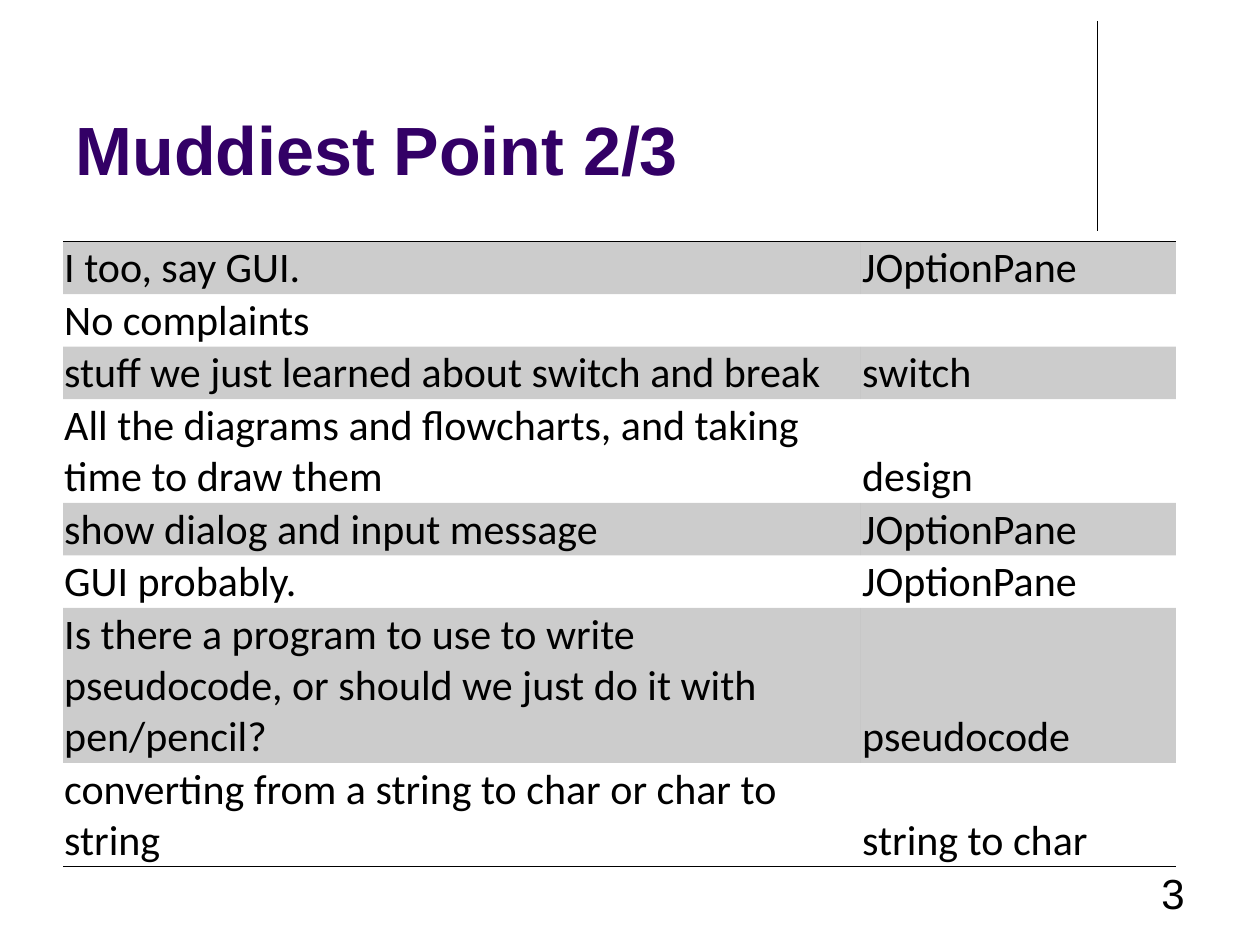
import pptx
import pptx.dml.color
import pptx.enum.shapes
import pptx.enum.text
import pptx.oxml
import pptx.oxml.ns
import pptx.util

COLORS = {"ink": "000000", "title": "330066"}
UNIT = pptx.util.Inches(1) / 6
ANCHOR = pptx.enum.text.MSO_ANCHOR
ALIGN = pptx.enum.text.PP_ALIGN
PLAIN_TABLE = "{2D5ABB26-0587-4C30-8999-92F81FD0307C}"
COMMENTS = [
    ("I too, say GUI.", "JOptionPane", 1),
    ("No complaints", "", 1),
    ("stuff we just learned about switch and break", "switch", 1),
    ("All the diagrams and flowcharts, and taking time to draw them", "design", 2),
    ("show dialog and input message", "JOptionPane", 1),
    ("GUI probably.", "JOptionPane", 1),
    ("Is there a program to use to write pseudocode, or should we just do it "
     "with pen/pencil?", "pseudocode", 3),
    ("converting from a string to char or char to string", "string to char", 2),
]


def grid(*units):
    """Convert grid units of a sixth of an inch to lengths."""
    return [pptx.util.Emu(round(unit * UNIT)) for unit in units]


def apply(target, values):
    """Set each named attribute of the target."""
    for name, value in values.items():
        setattr(target, name, value)


def rgb(name):
    """Look up a palette colour."""
    return pptx.dml.color.RGBColor.from_string(COLORS[name])


class SlideBuilder:
    """Hold the text styles and the current slide."""

    styles = {
        "title": {"name": "Arial", "size": pptx.util.Pt(39), "bold": True},
        "cell": {"name": "Calibri", "size": pptx.util.Pt(24)},
        "number": {"name": "Arial", "size": pptx.util.Pt(24)},
    }

    def __init__(self, presentation):
        """Add a title-only slide."""
        self.slide = presentation.slides.add_slide(presentation.slide_layouts[5])

    def set_text(self, frame, text, style, color="ink", align=ALIGN.LEFT):
        """Fill a text frame with one styled paragraph."""
        frame.text = text
        frame.word_wrap = True
        paragraph = frame.paragraphs[0]
        paragraph.alignment = align
        apply(paragraph.font, self.styles[style])
        paragraph.font.color.rgb = rgb(color)

    def title(self, text, *box):
        """Place and format the title placeholder."""
        shape = self.slide.shapes.title
        apply(shape, dict(zip(("left", "top", "width", "height"), grid(*box))))
        self.set_text(shape.text_frame, text, "title", "title")
        apply(shape.text_frame, {"vertical_anchor": ANCHOR.BOTTOM,
                                 "auto_size": pptx.enum.text.MSO_AUTO_SIZE.NONE})

    def number(self, text, *box):
        """Add the right-aligned slide number."""
        shape = self.slide.shapes.add_textbox(*grid(*box))
        self.set_text(shape.text_frame, text, "number", align=ALIGN.RIGHT)

    def rule(self, *ends):
        """Draw a thin straight line."""
        line = self.slide.shapes.add_connector(
            pptx.enum.shapes.MSO_CONNECTOR.STRAIGHT, *grid(*ends))
        line.line.width = pptx.util.Pt(0.75)
        line.line.color.rgb = rgb("ink")
        line._element.spPr.append(pptx.oxml.parse_xml(
            f'<a:effectLst {pptx.oxml.ns.nsdecls("a")}/>'))

    def shade(self, cell):
        """Fill a cell with translucent ink."""
        cell.fill.solid()
        cell.fill.fore_color.rgb = rgb("ink")
        color = cell._tc.tcPr.find(".//" + pptx.oxml.ns.qn("a:srgbClr"))
        color.append(pptx.oxml.parse_xml(
            f'<a:alpha {pptx.oxml.ns.nsdecls("a")} val="20000"/>'))

    def border(self, cell, side):
        """Draw one edge of a cell."""
        cell._tc.get_or_add_tcPr().insert(0, pptx.oxml.parse_xml(
            f'<a:ln{side} {pptx.oxml.ns.nsdecls("a")} w="12700"><a:solidFill>'
            f'<a:srgbClr val="{COLORS["ink"]}"/></a:solidFill></a:ln{side}>'))

    def table(self, rows, left, top, widths, line_height):
        """Add a table with shaded odd rows and outer rules."""
        height = line_height * sum(row[-1] for row in rows)
        table = self.slide.shapes.add_table(
            len(rows), len(widths), *grid(left, top, sum(widths), height)).table
        apply(table, {"first_row": False, "horz_banding": False})
        table._tbl.tblPr.find(pptx.oxml.ns.qn("a:tableStyleId")).text = PLAIN_TABLE
        for column, width in zip(table.columns, grid(*widths)):
            column.width = width
        margin = pptx.util.Inches(0.01)
        layout = {"margin_left": margin, "margin_right": margin, "margin_top": margin,
                  "margin_bottom": 0, "vertical_anchor": ANCHOR.BOTTOM}
        for index, (*texts, lines) in enumerate(rows):
            table.rows[index].height = grid(lines * line_height)[0]
            for cell, text in zip(table.rows[index].cells, texts):
                apply(cell, layout)
                self.set_text(cell.text_frame, text, "cell")
                if index % 2 == 0:
                    self.shade(cell)
                else:
                    cell.fill.background()
                if index == 0:
                    self.border(cell, "T")
                if index == len(rows) - 1:
                    self.border(cell, "B")


def main():
    """Build and save the slide."""
    presentation = pptx.Presentation()
    apply(presentation, dict(zip(("slide_width", "slide_height"), grid(60, 45))))
    builder = SlideBuilder(presentation)
    builder.rule(52.25, 1, 52.25, 11)
    builder.title("Muddiest Point 2/3", 3, 0.8, 49.5, 8.5)
    builder.table(COMMENTS, 3, 11.5, (38, 15), 2.44)
    builder.number("3", 43, 41, 14, 3)
    presentation.save("out.pptx")


if __name__ == "__main__":
    main()
